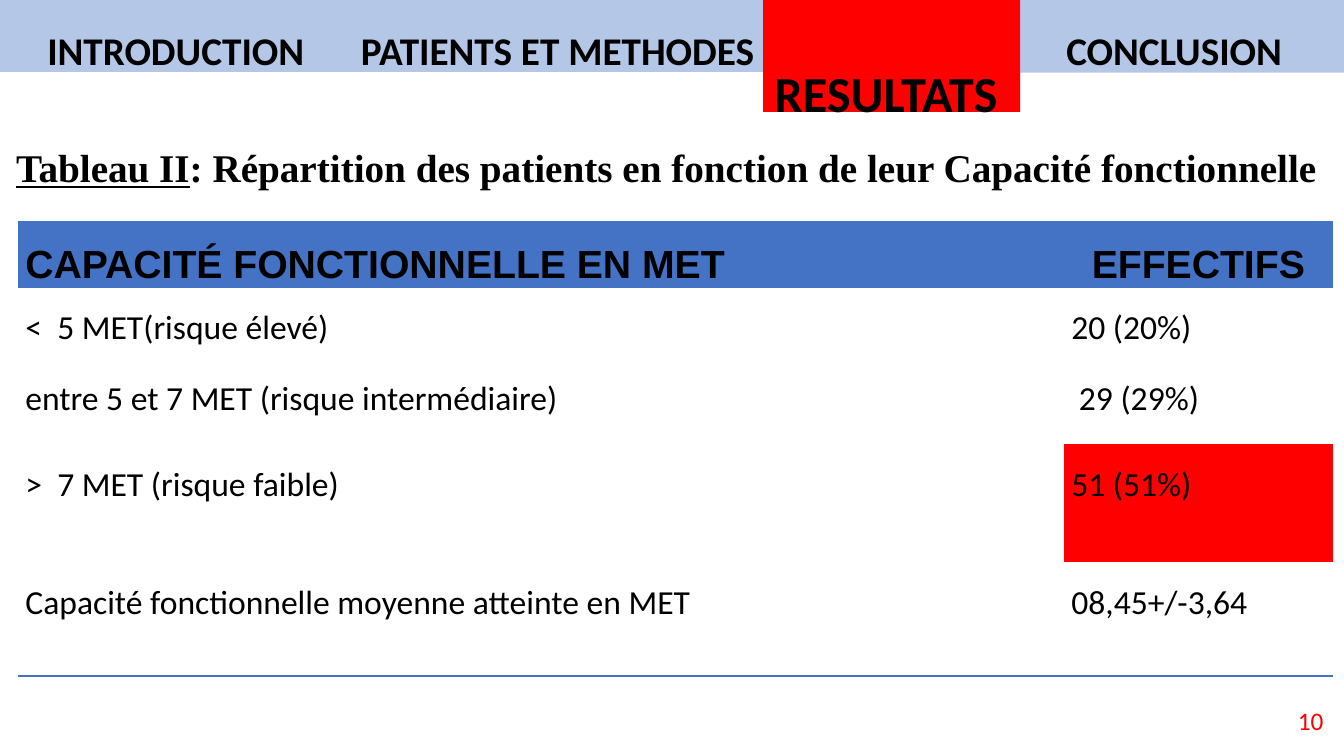
"""Build the results slide on the patients' functional capacity."""
import pptx
import pptx.dml.color
import pptx.enum.shapes
import pptx.enum.text
import pptx.oxml
import pptx.oxml.ns
import pptx.util
from pptx.util import Cm

BLACK = pptx.dml.color.RGBColor(0x00, 0x00, 0x00)
RED = pptx.dml.color.RGBColor(0xFF, 0x00, 0x00)
BLUE = pptx.dml.color.RGBColor(0x44, 0x72, 0xC4)
PALE_BLUE = pptx.dml.color.RGBColor(0xB4, 0xC7, 0xE7)
ALIGN = pptx.enum.text.PP_ALIGN
ANCHOR = pptx.enum.text.MSO_ANCHOR
PLAIN_TABLE_STYLE = "{2D5ABB26-0587-4C30-8999-92F81FD0307C}"

TABS = [
    ("PATIENTS ET METHODES", 8.69, -0.05, 10.72, 1.86, PALE_BLUE, 28, 1.5),
    ("CONCLUSION", 25.3, -0.05, 8.58, 1.88, PALE_BLUE, 28, 1.5),
    ("INTRODUCTION", 0, -0.05, 8.86, 1.86, PALE_BLUE, 28, 1.5),
    ("RESULTATS ", 19.23, -0.08, 6.48, 2.9, RED, 36, 2.0),
]
ROWS = [
    ("CAPACITÉ FONCTIONNELLE EN MET", "EFFECTIFS"),
    ("<  5 MET(risque élevé)", "20 (20%)"),
    ("entre 5 et 7 MET (risque intermédiaire)", " 29 (29%)"),
    (">  7 MET (risque faible)", "51 (51%)"),
    ("Capacité fonctionnelle moyenne atteinte en MET", "08,45+/-3,64"),
]
ROW_HEIGHTS = [1.6, 1.8, 2.16, 2.97, 2.87]
COLUMN_WIDTHS = [26.36, 6.78]
HIGHLIGHTED_CELL = (3, 1)


def format_paragraph(paragraph, font_name, size, color=BLACK, bold=False,
                     alignment=ALIGN.LEFT, line_spacing=1.0, space_after=0):
    """Set the spacing of a paragraph and the font of its runs."""
    paragraph.alignment = alignment
    paragraph.line_spacing = line_spacing
    paragraph.space_before = pptx.util.Pt(0)
    paragraph.space_after = pptx.util.Pt(space_after)
    for run in paragraph.runs:
        run.font.name = font_name
        run.font.size = pptx.util.Pt(size)
        run.font.bold = bold
        run.font.color.rgb = color


def add_tab(group, label, left, top, width, height, color, size, line_spacing):
    """Add one section tab to the navigation strip."""
    shape = group.shapes.add_shape(pptx.enum.shapes.MSO_SHAPE.RECTANGLE,
                                   Cm(left), Cm(top), Cm(width), Cm(height))
    shape.shadow.inherit = False
    shape.fill.solid()
    shape.fill.fore_color.rgb = color
    shape.line.fill.background()
    text_frame = shape.text_frame
    text_frame.text = label
    text_frame.vertical_anchor = ANCHOR.TOP
    format_paragraph(text_frame.paragraphs[0], "Calibri", size, bold=True,
                     alignment=ALIGN.CENTER, line_spacing=line_spacing)


def set_title(slide, label, description):
    """Place the table caption in the title placeholder."""
    title = slide.shapes.title
    title.left, title.top, title.width, title.height = Cm(0.15), Cm(3.48), Cm(33.72), Cm(1.45)
    text_frame = title.text_frame
    text_frame.text = label
    text_frame.word_wrap = True
    text_frame.auto_size = pptx.enum.text.MSO_AUTO_SIZE.NONE
    text_frame.vertical_anchor = ANCHOR.TOP
    paragraph = text_frame.paragraphs[0]
    paragraph.add_run().text = description
    format_paragraph(paragraph, "Times New Roman", 28, bold=True, space_after=10)
    paragraph.runs[0].font.underline = True


def set_border(cell, side):
    """Draw a thin blue border on the lnT or lnB side of a cell."""
    border = pptx.oxml.parse_xml(
        f'<a:{side} {pptx.oxml.ns.nsdecls("a")} w="12700"><a:solidFill>'
        f'<a:srgbClr val="{BLUE}"/></a:solidFill></a:{side}>')
    cell_properties = cell._tc.get_or_add_tcPr()
    position = len(cell_properties.findall(pptx.oxml.ns.qn("a:lnT")))
    cell_properties.insert(position, border)


def format_cell(cell, text, row, column):
    """Fill a table cell and style it by its place in the table."""
    is_header = row == 0
    cell.text = text
    cell.margin_left = cell.margin_right = Cm(0.19)
    cell.margin_top = cell.margin_bottom = Cm(0)
    if is_header or (row, column) == HIGHLIGHTED_CELL:
        cell.fill.solid()
        cell.fill.fore_color.rgb = BLUE if is_header else RED
    else:
        cell.fill.background()
    if is_header:
        set_border(cell, "lnT")
    if row in (0, len(ROWS) - 1):
        set_border(cell, "lnB")
    format_paragraph(cell.text_frame.paragraphs[0],
                     "Arial" if is_header else "Calibri",
                     28 if is_header else 24, bold=is_header,
                     alignment=ALIGN.CENTER if is_header and column else ALIGN.LEFT,
                     line_spacing=1.5, space_after=8)


def add_capacity_table(slide):
    """Add the table of functional capacity."""
    frame = slide.shapes.add_table(len(ROWS), len(COLUMN_WIDTHS), Cm(0.45), Cm(5.58),
                                   Cm(sum(COLUMN_WIDTHS)), Cm(sum(ROW_HEIGHTS)))
    table = frame.table
    table.horz_banding = False
    table._tbl.tblPr.find(pptx.oxml.ns.qn("a:tableStyleId")).text = PLAIN_TABLE_STYLE
    for column, width in enumerate(COLUMN_WIDTHS):
        table.columns[column].width = Cm(width)
    for row, texts in enumerate(ROWS):
        table.rows[row].height = Cm(ROW_HEIGHTS[row])
        for column, text in enumerate(texts):
            format_cell(table.cell(row, column), text, row, column)


def add_page_number(slide, number):
    """Add the red page number at the bottom right."""
    text_frame = slide.shapes.add_textbox(Cm(31.8), Cm(17.65), Cm(1.8), Cm(1.02)).text_frame
    text_frame.text = number
    text_frame.word_wrap = True
    text_frame.vertical_anchor = ANCHOR.MIDDLE
    format_paragraph(text_frame.paragraphs[0], "Calibri", 18, RED, alignment=ALIGN.RIGHT)


def main():
    """Create the presentation and save it."""
    presentation = pptx.Presentation()
    presentation.slide_width = Cm(33.87)
    presentation.slide_height = Cm(19.05)
    slide = presentation.slides.add_slide(presentation.slide_layouts[5])
    add_capacity_table(slide)
    add_page_number(slide, "10")
    set_title(slide, "Tableau II",
              ": Répartition des patients en fonction de leur Capacité fonctionnelle")
    navigation = slide.shapes.add_group_shape()
    for tab in TABS:
        add_tab(navigation, *tab)
    presentation.save("out.pptx")


if __name__ == "__main__":
    main()
